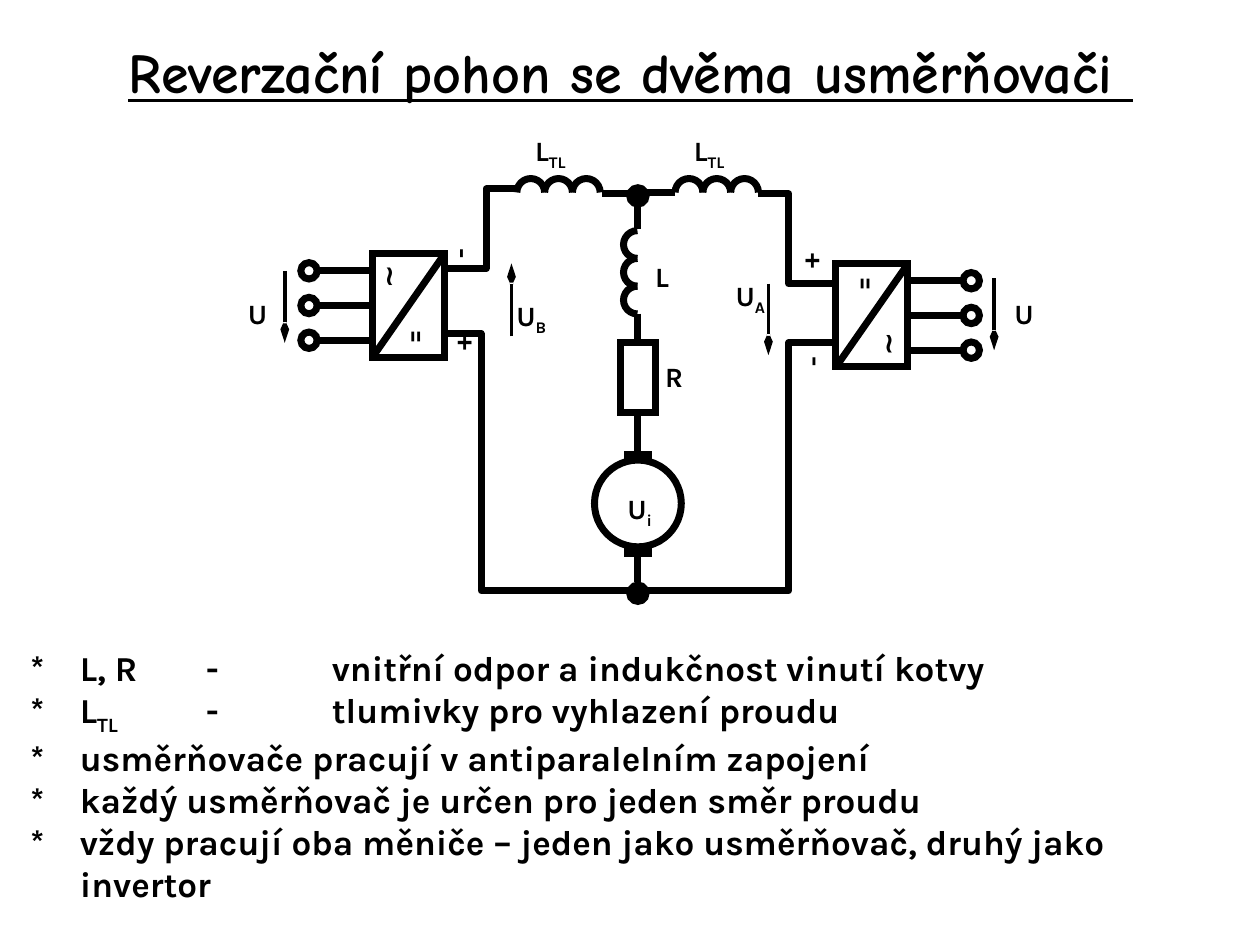
"""Build a slide with the circuit of a reversing drive fed by two rectifiers."""
import pptx
import pptx.dml.color
import pptx.enum.shapes
import pptx.enum.text
import pptx.oxml.ns
import pptx.util
from lxml import etree

Cm = pptx.util.Cm
Pt = pptx.util.Pt
SHAPES = pptx.enum.shapes.MSO_SHAPE
BLACK = "000000"
AXIS = 12.86
TERMINAL = 0.33


def color(hexadecimal):
    """Return the colour for a hex string."""
    return pptx.dml.color.RGBColor.from_string(hexadecimal)


def add_child(parent, name, **attributes):
    """Append a DrawingML element to a parent element."""
    return etree.SubElement(parent, pptx.oxml.ns.qn(name), attributes)


def add_text(slide, text, box, size=16, font="Karla", rotation=0, align="LEFT",
             anchor="TOP", wrap=False, margins=(0.1, 0.1), underline=None, hanging=0):
    """Add a text box; underscores enclose subscripts and newlines part paragraphs."""
    shape = slide.shapes.add_textbox(*map(Cm, box))
    shape.rotation = rotation
    frame = shape.text_frame
    frame.word_wrap = wrap
    frame.vertical_anchor = getattr(pptx.enum.text.MSO_ANCHOR, anchor)
    frame.margin_left = frame.margin_right = Cm(margins[0])
    frame.margin_top = frame.margin_bottom = Cm(margins[1])
    for number, line in enumerate(text.split("\n")):
        paragraph = frame.add_paragraph() if number else frame.paragraphs[0]
        paragraph.alignment = getattr(pptx.enum.text.PP_ALIGN, align)
        if hanging:
            properties = paragraph._p.get_or_add_pPr()
            properties.set("marL", str(Cm(hanging)))
            properties.set("indent", str(-Cm(hanging)))
            properties.set("defTabSz", str(Cm(2.54)))
        for index, part in enumerate(line.split("_")):
            if not part:
                continue
            run = paragraph.add_run()
            run.text = part
            run.font.name, run.font.size = font, Pt(size)
            run.font.bold, run.font.underline = True, underline
            run.font.color.rgb = color(BLACK)
            if index % 2:
                run.font._element.set("baseline", "-25000")
    return shape


def style_outline(shape, width=4, fill=None):
    """Give a shape a black outline and an optional fill."""
    shape.shadow.inherit = False
    shape.line.color.rgb = color(BLACK)
    shape.line.width = Pt(width)
    if fill:
        shape.fill.solid()
        shape.fill.fore_color.rgb = color(fill)
    else:
        shape.fill.background()


def add_shape(slide, kind, box, **style):
    """Add an outlined preset shape with mitred corners."""
    shape = slide.shapes.add_shape(kind, *map(Cm, box))
    style_outline(shape, **style)
    add_child(shape.line._get_or_add_ln(), "a:miter", lim="800000")
    return shape


def add_circle(slide, x, y, diameter, **style):
    """Add a circle around a centre."""
    corner = (x - diameter / 2, y - diameter / 2)
    return add_shape(slide, SHAPES.OVAL, (*corner, diameter, diameter), **style)


def add_line(slide, start, end, width=4, arrow=False):
    """Add a straight line, with an arrowhead at its end if wanted."""
    ends = map(Cm, (*start, *end))
    line = slide.shapes.add_connector(pptx.enum.shapes.MSO_CONNECTOR.STRAIGHT, *ends)
    line.line.color.rgb = color(BLACK)
    line.line.width = Pt(width)
    if arrow:
        add_child(line.line._get_or_add_ln(), "a:tailEnd", type="arrow", w="sm", len="lg")
    add_child(line._element.spPr, "a:effectLst")
    return line


def add_wire(slide, points):
    """Add a bent wire through the points."""
    first, *others = [(Cm(x), Cm(y)) for x, y in points]
    builder = slide.shapes.build_freeform(*first)
    builder.add_line_segments(others, close=False)
    style_outline(builder.convert_to_shape())


def add_coil(slide, left, top, vertical=False):
    """Add a coil of three half circles."""
    diameter = 0.56
    for turn in range(3):
        shift = turn * diameter
        x, y = (left, top + shift) if vertical else (left + shift, top)
        arc = add_shape(slide, SHAPES.ARC, (x, y, diameter, diameter))
        arc.adjustments[0], arc.adjustments[1] = (54, 162) if vertical else (108, 0)


def add_rectifier(slide, left, top, direction):
    """Add a rectifier with three terminals on its left (-1) or right (1) side."""
    width, height = 1.45, 2.08
    add_shape(slide, SHAPES.RECTANGLE, (left, top, width, height))
    add_line(slide, (left, top + height), (left + width, top))
    edge = left + width if direction > 0 else left
    for phase in range(3):
        y = top + 0.34 + 0.7 * phase
        add_line(slide, (edge, y), (edge + direction * 1.11, y))
        add_circle(slide, edge + direction * 1.28, y, TERMINAL)


def add_armature(slide):
    """Add the middle branch with inductance, resistance and motor."""
    add_coil(slide, 12.57, 4.65, vertical=True)
    add_shape(slide, SHAPES.RECTANGLE, (12.5, 6.91, 0.71, 1.4))
    add_circle(slide, AXIS, 10.15, 1.75)
    for top in (9.13, 11.04):
        add_shape(slide, SHAPES.RECTANGLE, (12.62, top, 0.48, 0.15), width=2, fill=BLACK)
    for top, bottom in ((4.06, 4.62), (6.32, 6.91), (8.38, 9.09), (11.23, 11.73)):
        add_line(slide, (AXIS, top), (AXIS, bottom))
    for y in (3.95, 11.96):
        add_circle(slide, AXIS, y, TERMINAL, fill=BLACK)


def add_loops(slide):
    """Add the chokes and the wires between rectifiers and armature."""
    add_coil(slide, 10.42, 3.6)
    add_coil(slide, 13.61, 3.6)
    add_line(slide, (12.14, 3.91), (12.7, 3.91))
    add_line(slide, (13.03, 3.89), (13.61, 3.89))
    add_wire(slide, [(10.39, 3.81), (9.8, 3.81), (9.8, 5.41), (8.99, 5.41)])
    add_wire(slide, [(8.92, 6.73), (9.7, 6.73), (9.7, 11.91), (12.7, 11.91)])
    add_wire(slide, [(15.29, 3.91), (15.9, 3.91), (15.9, 5.72), (16.89, 5.72)])
    add_wire(slide, [(16.89, 6.91), (15.9, 6.91), (15.9, 11.91), (12.9, 11.91)])


def add_labels(slide):
    """Add the voltage arrows and all names and signs of the circuit."""
    for x, start, end in ((5.74, 5.46, 6.91), (10.31, 6.78, 5.31),
                          (15.49, 5.72, 7.16), (20.04, 5.61, 7.06)):
        add_line(slide, (x, start), (x, end), width=2, arrow=True)
    names = [("U", 4.9, 5.87, 0.61), ("U", 20.35, 5.87, 0.61), ("U_i", 12.55, 9.8, 0.74),
             ("U_B", 10.31, 5.92, 0.89), ("U_A", 14.73, 5.51, 0.89),
             ("L_TL", 10.69, 2.59, 0.99), ("L_TL", 13.89, 2.59, 0.99),
             ("L", 13.11, 5.13, 0.53), ("R", 13.31, 7.14, 0.61)]
    for text, x, y, width in names:
        add_text(slide, text, (x, y, width, 0.89))
    poles = [("-", 9.12, 4.7, 0.46), ("+", 9.12, 6.55, 0.66),
             ("+", 16.13, 4.9, 0.66), ("-", 16.23, 6.88, 0.46)]
    for text, x, y, width in poles:
        add_text(slide, text, (x, y, width, 0.89), rotation=90)
    currents = [("∼", 7.49, 5.28, 270), ("=", 7.98, 6.4, 270),
                ("=", 17.2, 5.18, 90), ("∼", 17.65, 6.3, 90)]
    for text, x, y, rotation in currents:
        add_text(slide, text, (x, y, 0.64, 0.94), rotation=rotation, align="CENTER",
                 wrap=True, margins=(0.25, 0.13))


def main():
    """Build and save the presentation."""
    presentation = pptx.Presentation()
    presentation.slide_width, presentation.slide_height = Cm(25.4), Cm(19.05)
    slide = presentation.slides.add_slide(presentation.slide_layouts[6])
    add_text(slide, "Reverzační pohon se dvěma usměrňovači ", (0.51, 0.53, 24.41, 1.8),
             size=32, font="Comic Neue", align="CENTER", anchor="MIDDLE", wrap=True,
             underline=True)
    add_rectifier(slide, 7.51, 5.12, -1)
    add_rectifier(slide, 16.85, 5.32, 1)
    add_loops(slide)
    add_armature(slide)
    add_labels(slide)
    notes = ["*\tL, R\t-\tvnitřní odpor a indukčnost vinutí kotvy",
             "*\tL_TL_\t-\ttlumivky pro vyhlazení proudu",
             "*\tusměrňovače pracují v antiparalelním zapojení",
             "*\tkaždý usměrňovač je určen pro jeden směr proudu",
             "*\tvždy pracují oba měniče – jeden jako usměrňovač, druhý jako invertor"]
    add_text(slide, "\n".join(notes), (0.51, 12.93, 24.61, 5.28), size=20, wrap=True,
             hanging=1)
    presentation.save("out.pptx")


if __name__ == "__main__":
    main()
